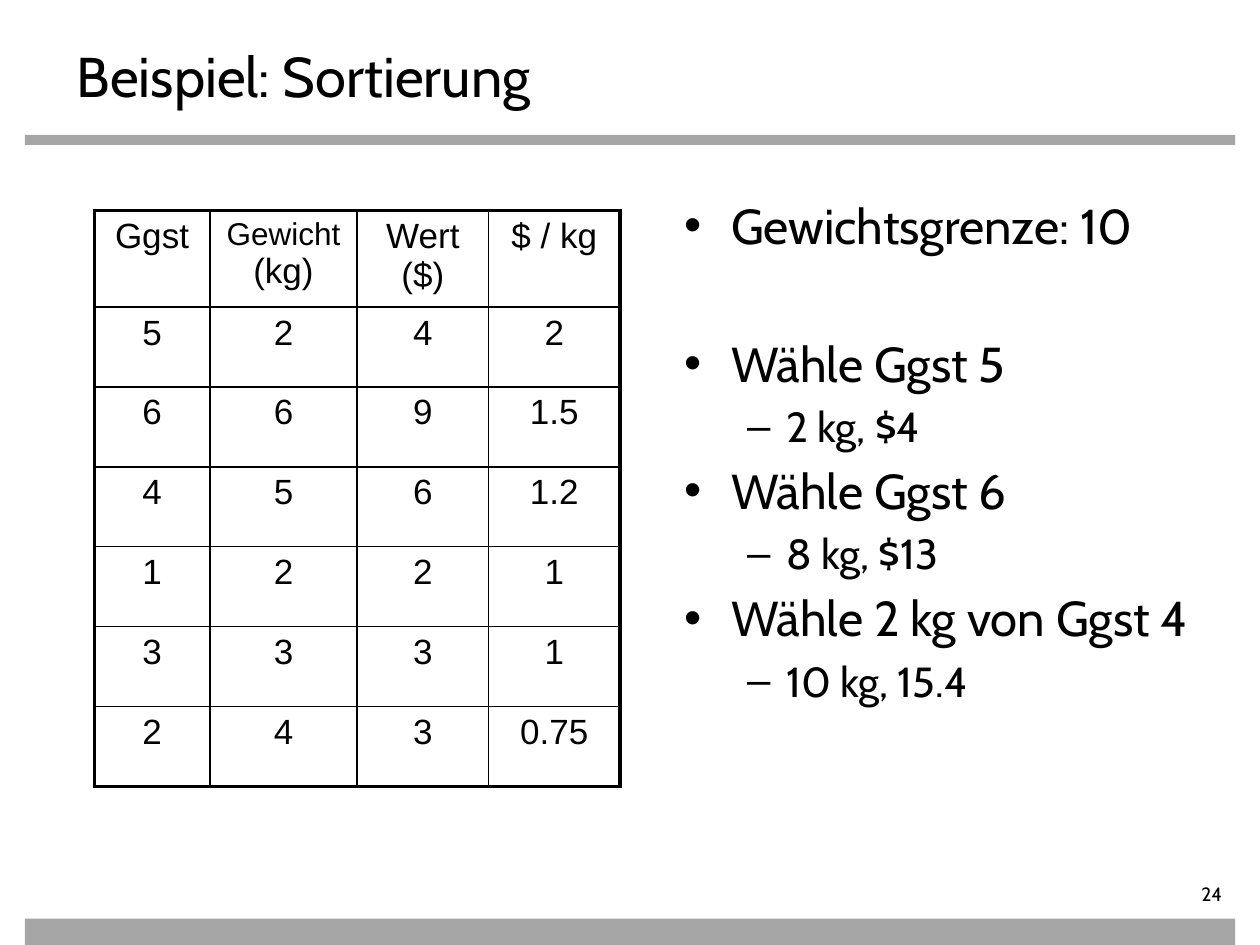
"""Build the slide on sorting items by value per weight."""
from dataclasses import dataclass

from lxml import etree
from pptx import Presentation, util as u
from pptx.dml.color import RGBColor
from pptx.enum import shapes, text
from pptx.oxml import ns


@dataclass(frozen=True)
class Theme:
    ink: str = "000000"
    bar: str = "A6A6A6"
    font: str = "Cabin"
    grid: str = "Arial"
    title: int = 32
    body: tuple = (28, 24)
    cell: int = 20
    small: int = 18
    page: int = 11
    thin: float = 1
    thick: float = 2.25


class Deck:
    def __init__(self, theme):
        self.theme = theme
        self.deck = Presentation()
        self.deck.slide_width, self.deck.slide_height = u.Cm(25.4), u.Cm(19.05)
        self.slide = self.deck.slides.add_slide(self.deck.slide_layouts[6])

    def run(self, para, words, size, font):
        run = para.add_run()
        run.text = words
        run.font.size, run.font.name = u.Pt(size), font
        run.font.color.rgb = RGBColor.from_string(self.theme.ink)

    def bar(self, *area):
        rect = self.slide.shapes.add_shape(
            shapes.MSO_SHAPE.RECTANGLE, *map(u.Cm, area))
        rect.shadow.inherit = False
        rect.fill.solid()
        rect.fill.fore_color.rgb = RGBColor.from_string(self.theme.bar)
        rect.line.fill.background()

    def box(self, *area):
        frame = self.slide.shapes.add_textbox(*map(u.Cm, area)).text_frame
        frame.word_wrap = True
        return frame

    def title(self, words, *area):
        para = self.box(*area).paragraphs[0]
        self.run(para, words, self.theme.title, self.theme.font)

    def page(self, words, *area):
        frame = self.box(*area)
        frame.margin_left = frame.margin_top = frame.margin_bottom = 0
        para = frame.paragraphs[0]
        para.alignment = text.PP_ALIGN.RIGHT
        self.run(para, words, self.theme.page, self.theme.font)

    def list(self, items, *area):
        frame = self.box(*area)
        marks = (("•", 0.95, -0.95), ("–", 2.06, -0.79))
        for i, (level, gap, words) in enumerate(items):
            para = frame.paragraphs[0] if i == 0 else frame.add_paragraph()
            mark, left, hang = marks[level]
            prop = para._p.get_or_add_pPr()
            prop.set("marL", str(u.Cm(left)))
            prop.set("indent", str(u.Cm(hang)))
            etree.SubElement(prop, ns.qn("a:buFont")).set("typeface", self.theme.grid)
            etree.SubElement(prop, ns.qn("a:buChar")).set("char", mark)
            para.level = level
            para.space_before = u.Pt(gap)
            self.run(para, words, self.theme.body[level], self.theme.font)

    def edge(self, cell, sides):
        prop = cell._tc.get_or_add_tcPr()
        for i, (side, outer) in enumerate(sides.items()):
            line = etree.Element(ns.qn(f"a:ln{side}"))
            width = self.theme.thick if outer else self.theme.thin
            line.set("w", str(u.Pt(width)))
            fill = etree.SubElement(line, ns.qn("a:solidFill"))
            etree.SubElement(fill, ns.qn("a:srgbClr")).set("val", self.theme.ink)
            prop.insert(i, line)

    def table(self, rows, wide, high, left, top):
        area = map(u.Cm, (left, top, sum(wide), sum(high)))
        grid = self.slide.shapes.add_table(len(rows), len(wide), *area).table
        grid.first_row = grid.horz_banding = False
        for col, size in zip(grid.columns, wide):
            col.width = u.Cm(size)
        for row, size in zip(grid.rows, high):
            row.height = u.Cm(size)
        for r, row in enumerate(rows):
            for c, runs in enumerate(row):
                cell = grid.cell(r, c)
                cell.fill.background()
                para = cell.text_frame.paragraphs[0]
                para.alignment = text.PP_ALIGN.CENTER
                for words, size in runs:
                    self.run(para, words, size, self.theme.grid)
                self.edge(cell, {"L": c == 0, "R": c == len(wide) - 1,
                                 "T": r == 0, "B": r == len(rows) - 1})


def main():
    theme = Theme()
    deck = Deck(theme)
    deck.bar(0.5, 2.72, 24.4, 0.2)
    deck.bar(0.5, 18.52, 24.4, 0.53)
    deck.title("Beispiel: Sortierung", 1.3, 0.71, 22.86, 1.4)
    deck.list([
        (0, 0, "Gewichtsgrenze: 10"),
        (0, 45.2, "Wähle Ggst 5"),
        (1, 4.8, "2 kg, $4"),
        (0, 5.6, "Wähle Ggst 6"),
        (1, 4.8, "8 kg, $13"),
        (0, 5.6, "Wähle 2 kg von Ggst 4"),
        (1, 4.8, "10 kg, 15.4"),
    ], 13.54, 3.81, 11.23, 11.43)
    goods = ["5 2 4 2", "6 6 9 1.5", "4 5 6 1.2", "1 2 2 1", "3 3 3 1", "2 4 3 0.75"]
    full = theme.cell
    head = [[("Ggst", full)], [("Gewicht ", theme.small), ("(kg)", full)],
            [("Wert ($)", full)], [("$ / kg", full)]]
    rows = [head] + [[[(word, full)] for word in item.split()] for item in goods]
    deck.table(rows, (2.33, 2.97, 2.65, 2.65), [1.95] + [1.61] * len(goods), 1.9, 4.24)
    deck.page("24", 22.1, 17.78, 2.79, 0.56)
    deck.deck.save("out.pptx")


if __name__ == "__main__":
    main()
